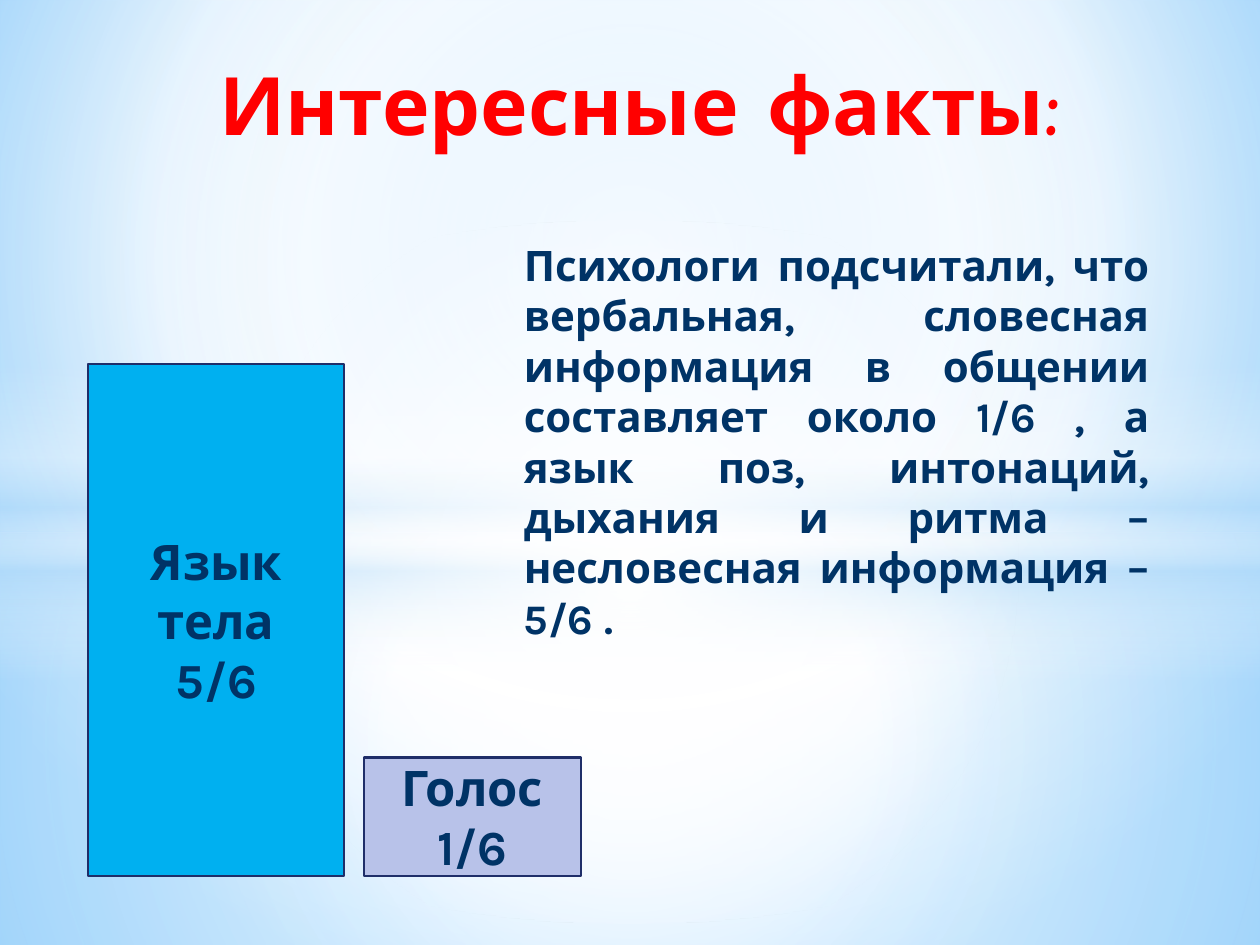
from lxml import etree
from pptx import Presentation
from pptx.dml.color import RGBColor
from pptx.enum.shapes import MSO_SHAPE
from pptx.enum.text import MSO_ANCHOR, MSO_AUTO_SIZE, PP_ALIGN
from pptx.oxml.ns import qn
from pptx.util import Cm, Pt

RECT, OVAL = MSO_SHAPE.RECTANGLE, MSO_SHAPE.OVAL
TOP, MIDDLE, BOTTOM = MSO_ANCHOR.TOP, MSO_ANCHOR.MIDDLE, MSO_ANCHOR.BOTTOM
CENTER, JUSTIFY = PP_ALIGN.CENTER, PP_ALIGN.JUSTIFY
NO_FIT = MSO_AUTO_SIZE.NONE
TITLE_ONLY = 5
WIDTH, HEIGHT = 25.4, 19.05
NAVY = "003366"
CENTRE = (50, 50, 50, 50)

# Gradient stops: position %, colour, opacity %
BACKDROP = [(0, "9ED5FF", 100), (60, "FFFFFF", 100), (100, "5BB9FF", 100)]
FLOOR = [(0, "FFFFFF", 92), (37, "FFFFFF", 77), (100, "B4DCFA", 80)]
SKY = [(0, "FFFFFF", 90), (48, "FFFFFF", 63), (100, "B4DCFA", 80)]
HORIZON = [(0, "FFFFFF", 0), (29, "FFFFFF", 30), (45, "B4DCFA", 40),
           (55, "FFFFFF", 26), (65, "B4DCFA", 60), (100, "FFFFFF", 0)]
GLOW = [(0, "FFFFFF", 100), (54, "FFFFFF", 0)]


def rgb(value):
    return RGBColor.from_string(value)


def cm_box(box):
    return [Cm(v) for v in box]


def set_gradient(parent, stops, focus=None):
    """Replace a solid fill by a gradient: circular around focus, else vertical."""
    solid = parent.find(qn("a:solidFill"))
    grad = etree.Element(qn("a:gradFill"), rotWithShape="1")
    stop_list = etree.SubElement(grad, qn("a:gsLst"))
    for pos, color, opacity in stops:
        gs = etree.SubElement(stop_list, qn("a:gs"), pos=str(pos * 1000))
        clr = etree.SubElement(gs, qn("a:srgbClr"), val=color)
        if opacity < 100:
            etree.SubElement(clr, qn("a:alpha"), val=str(opacity * 1000))
    if focus:
        circle = etree.SubElement(grad, qn("a:path"), path="circle")
        sides = {k: str(v * 1000) for k, v in zip("ltrb", focus)}
        etree.SubElement(circle, qn("a:fillToRect"), **sides)
    else:
        etree.SubElement(grad, qn("a:lin"), ang="5400000", scaled="0")
    parent.replace(solid, grad)


def write(tf, lines, font, size, color, align, anchor):
    for name, value in {"word_wrap": True, "auto_size": NO_FIT,
                        "vertical_anchor": anchor}.items():
        setattr(tf, name, value)
    for i, line in enumerate(lines):
        p = tf.paragraphs[0] if i == 0 else tf.add_paragraph()
        p.alignment = align
        r = p.add_run()
        r.text = line
        for name, value in {"name": font, "size": Pt(size), "bold": True}.items():
            setattr(r.font, name, value)
        r.font.color.rgb = rgb(color)


def add_solid(s, kind, box, color):
    sp = s.shapes.add_shape(kind, *cm_box(box))
    sp.shadow.inherit = False
    sp.fill.solid()
    sp.fill.fore_color.rgb = rgb(color)
    return sp


def add_backdrop(s, width, height):
    s.background.fill.solid()
    bg = s.element.find(".//" + qn("p:bgPr"))
    set_gradient(bg, BACKDROP, (20, 10, 20, 60))
    split = 10.74
    layers = [
        (RECT, (0, split, width, height - split), FLOOR, CENTRE),
        (RECT, (0, 0, width, split), SKY, CENTRE),
        (RECT, (0, 7.37, width, 6.35), HORIZON, None),
        (OVAL, (0, 4.45, width, 14.17), GLOW, CENTRE),
    ]
    for kind, box, stops, focus in layers:
        sp = add_solid(s, kind, box, "FFFFFF")
        sp.line.fill.background()
        set_gradient(sp.element.spPr, stops, focus)


def add_title(s, box, text):
    title = s.shapes.title
    title.left, title.top, title.width, title.height = cm_box(box)
    write(title.text_frame, [text], "Comic Neue", 46, "FF0000", CENTER, TOP)


def add_body(s, box, text):
    tf = s.shapes.add_textbox(*cm_box(box)).text_frame
    write(tf, [text], "Karla", 24, NAVY, JUSTIFY, BOTTOM)
    tf.paragraphs[0].space_after = Pt(3)


def add_bars(s, box, bars, gap):
    """Stand bars side by side on the bottom edge of the box."""
    left, top, _, height = box
    for lines, w, h, color in bars:
        sp = add_solid(s, RECT, (left, top + height - h, w, h), color)
        sp.line.color.rgb = rgb("1F2E69")
        sp.line.width = Pt(1.25)
        write(sp.text_frame, lines, "Karla", 28, NAVY, CENTER, MIDDLE)
        left += w + gap


def main():
    prs = Presentation()
    prs.slide_width, prs.slide_height = Cm(WIDTH), Cm(HEIGHT)
    s = prs.slides.add_slide(prs.slide_layouts[TITLE_ONLY])
    add_backdrop(s, WIDTH, HEIGHT)
    add_title(s, (3.38, 0.99, 19.05, 2.77), "Интересные факты:")
    add_body(s, (10.31, 3.96, 13.11, 9.12),
             "Психологи подсчитали, что вербальная, словесная информация "
             "в общении составляет около 1/6 , а язык поз, интонаций, дыхания "
             "и ритма – несловесная информация – 5/6 .")
    add_bars(s, (1.78, 7.34, 9.93, 10.32), [
        (["Язык тела", "5/6"], 5.16, 10.32, "00B0F0"),
        (["Голос", "1/6"], 4.37, 2.39, "B8C2E9"),
    ], gap=0.4)
    # The title placeholder is created first: lift it above the backdrop
    s.shapes.element.append(s.shapes.title.element)
    prs.save("out.pptx")


if __name__ == "__main__":
    main()
